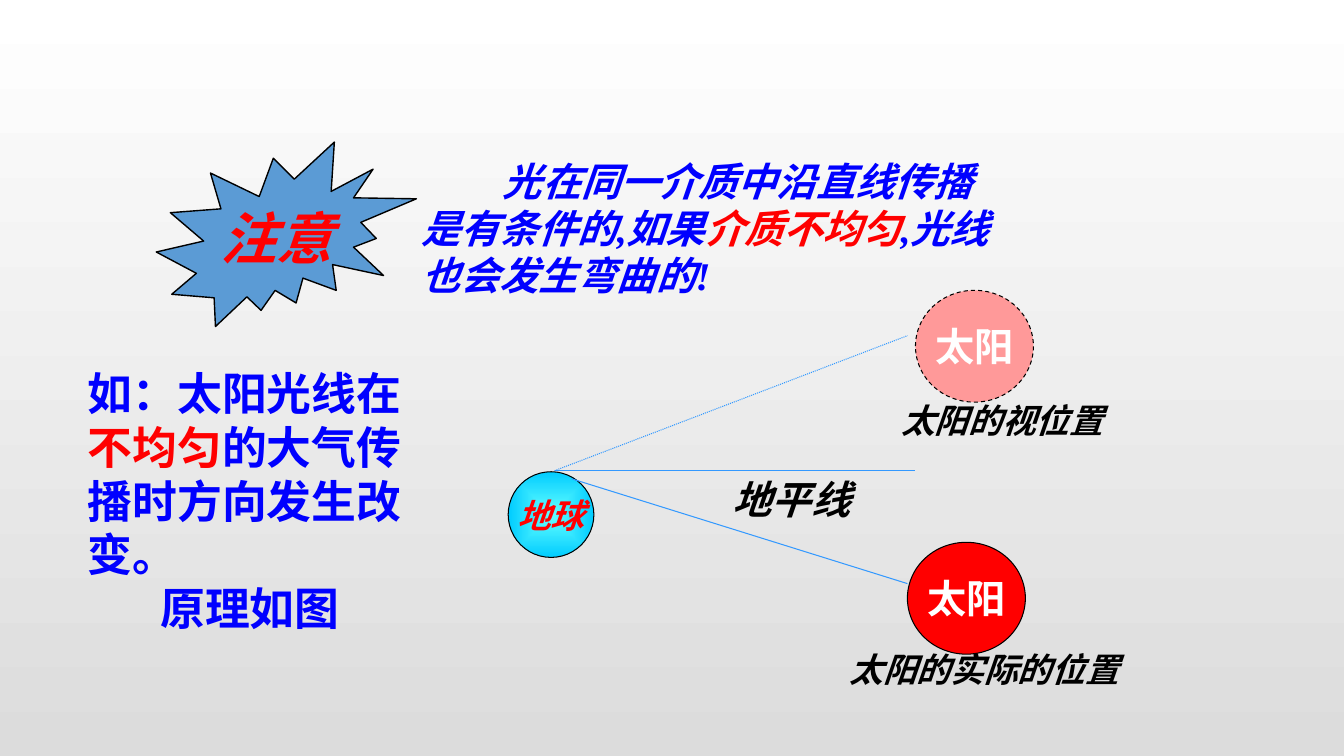
from dataclasses import dataclass

from pptx import Presentation
from pptx.dml.color import RGBColor
from pptx.enum.dml import MSO_LINE
from pptx.enum.lang import MSO_LANGUAGE_ID
from pptx.enum.shapes import MSO_CONNECTOR, MSO_SHAPE
from pptx.enum.text import MSO_ANCHOR, PP_ALIGN
from pptx.oxml import parse_xml
from pptx.oxml.ns import nsdecls, qn
from pptx.util import Inches, Pt


@dataclass(frozen=True)
class Theme:
    font: str = "Times New Roman"
    black: str = "000000"
    white: str = "FFFFFF"
    grey: str = "DCDCDC"
    red: str = "FF0000"
    pink: str = "FF9999"
    blue: str = "0000FF"
    burst: str = "5B9BD5"
    ray: str = "3399FF"
    aqua: tuple = ("66FFFF", "00CCFF")
    title: int = 40
    lead: int = 32
    body: int = 28
    small: int = 24


THEME = Theme()


def tint(color):
    return RGBColor.from_string(color)


def blend(fill, colors):
    fill.gradient()
    for stop, color, place in zip(fill.gradient_stops, colors, (0, 1)):
        stop.color.rgb = tint(color)
        stop.position = place


def write(para, runs, size, italic=True):
    """Fill a paragraph from (text, color) pairs."""
    style = {"name": THEME.font, "size": Pt(size), "bold": True, "italic": italic,
             "language_id": MSO_LANGUAGE_ID.SIMPLIFIED_CHINESE}
    for text, color in runs:
        run = para.add_run()
        run.text = text
        for key, value in style.items():
            setattr(run.font, key, value)
        run.font.color.rgb = tint(color)


def add_text(slide, box, runs, size, italic=True):
    frame = slide.shapes.add_textbox(*map(Inches, box)).text_frame
    frame.word_wrap = True
    write(frame.paragraphs[0], runs, size, italic)
    return frame


def indent(para, **values):
    for key, value in values.items():
        para._p.get_or_add_pPr().set(key, str(Inches(value)))


def add_badge(slide, kind, box, fill, label, color, size, italic=True, width=0.75):
    """Draw an outlined shape with a centred label."""
    shape = slide.shapes.add_shape(kind, *map(Inches, box))
    shape.shadow.inherit = False
    if isinstance(fill, tuple):
        blend(shape.fill, fill)
        grad = shape.element.spPr.find(qn("a:gradFill"))
        glow = parse_xml(f'<a:path {nsdecls("a")} path="shape"><a:fillToRect '
                         'l="50000" t="50000" r="50000" b="50000"/></a:path>')
        grad.replace(grad.find(qn("a:lin")), glow)
    else:
        shape.fill.solid()
        shape.fill.fore_color.rgb = tint(fill)
    shape.line.color.rgb = tint(THEME.black)
    shape.line.width = Pt(width)
    frame = shape.text_frame
    frame.word_wrap = False
    frame.vertical_anchor = MSO_ANCHOR.MIDDLE
    para = frame.paragraphs[0]
    para.alignment = PP_ALIGN.CENTER
    write(para, [(label, color)], size, italic)
    return shape


def add_ray(slide, start, end, dash=None):
    ray = slide.shapes.add_connector(MSO_CONNECTOR.STRAIGHT, *map(Inches, start + end))
    ray.line.color.rgb = tint(THEME.ray)
    ray.line.width = Pt(0.75)
    if dash:
        ray.line.dash_style = dash
    ray.element.spPr.append(parse_xml(f'<a:effectLst {nsdecls("a")}/>'))


def add_notice(slide, left, top):
    add_badge(slide, MSO_SHAPE.EXPLOSION2, (left, top, 2.58, 1.83), THEME.burst,
              "注意", THEME.red, THEME.title, width=1)
    runs = [("光在同一介质中沿直线传播是有条件的,如果", THEME.blue),
            ("介质不均匀", THEME.red),
            (",光线也会发生弯曲的!", THEME.blue)]
    frame = add_text(slide, (left + 2.53, top + 0.1, 5.9, 1.51), runs, THEME.body)
    indent(frame.paragraphs[0], indent=0.81)


def add_example(slide, left, top):
    runs = [("如：太阳光线在", THEME.blue),
            ("不均匀", THEME.red),
            ("的大气传播时方向发生改变。", THEME.blue)]
    frame = add_text(slide, (left, top, 3.32, 2.79), runs, THEME.lead, False)
    para = frame.add_paragraph()
    para.alignment = PP_ALIGN.CENTER
    indent(para, marL=0.1)
    write(para, [("原理如图", THEME.blue)], THEME.lead, False)


def add_sun(slide, left, top, fill):
    return add_badge(slide, MSO_SHAPE.OVAL, (left, top, 1.17, 1.11), fill,
                     "太阳", THEME.white, THEME.body, False)


def add_diagram(slide, left, top):
    """Draw the earth, the light rays and both positions of the sun."""
    def spot(x, y):
        return left + x, top + y

    add_badge(slide, MSO_SHAPE.OVAL, (*spot(0, 1.8), 0.85, 0.85), THEME.aqua,
              "地球", THEME.red, THEME.small)
    eye = spot(0.46, 1.79)
    add_ray(slide, eye, spot(4.04, 1.79))
    add_ray(slide, spot(0.63, 1.87), spot(3.96, 2.91))
    add_ray(slide, eye, spot(3.96, 0.45), MSO_LINE.ROUND_DOT)
    add_sun(slide, *spot(4.04, 0), THEME.pink).line.dash_style = MSO_LINE.DASH
    labels = [("地平线", (2.13, 1.79), 2.5, THEME.body),
              ("太阳的视位置", (3.8, 1.04), 2.49, THEME.small),
              ("太阳的实际的位置", (3.29, 3.51), 3.1, THEME.small)]
    for text, place, width, size in labels:
        add_text(slide, (*spot(*place), width, 0.5), [(text, THEME.black)], size)
    add_sun(slide, *spot(3.96, 2.5), THEME.red)


def main():
    deck = Presentation()
    deck.slide_width, deck.slide_height = Inches(13.33), Inches(7.5)
    slide = deck.slides.add_slide(deck.slide_layouts[6])
    back = slide.background.fill
    blend(back, (THEME.white, THEME.grey))
    back.gradient_angle = 270
    add_notice(slide, 1.55, 1.41)
    add_diagram(slide, 5.04, 2.88)
    add_example(slide, 0.77, 3.58)
    deck.save("out.pptx")


if __name__ == "__main__":
    main()
